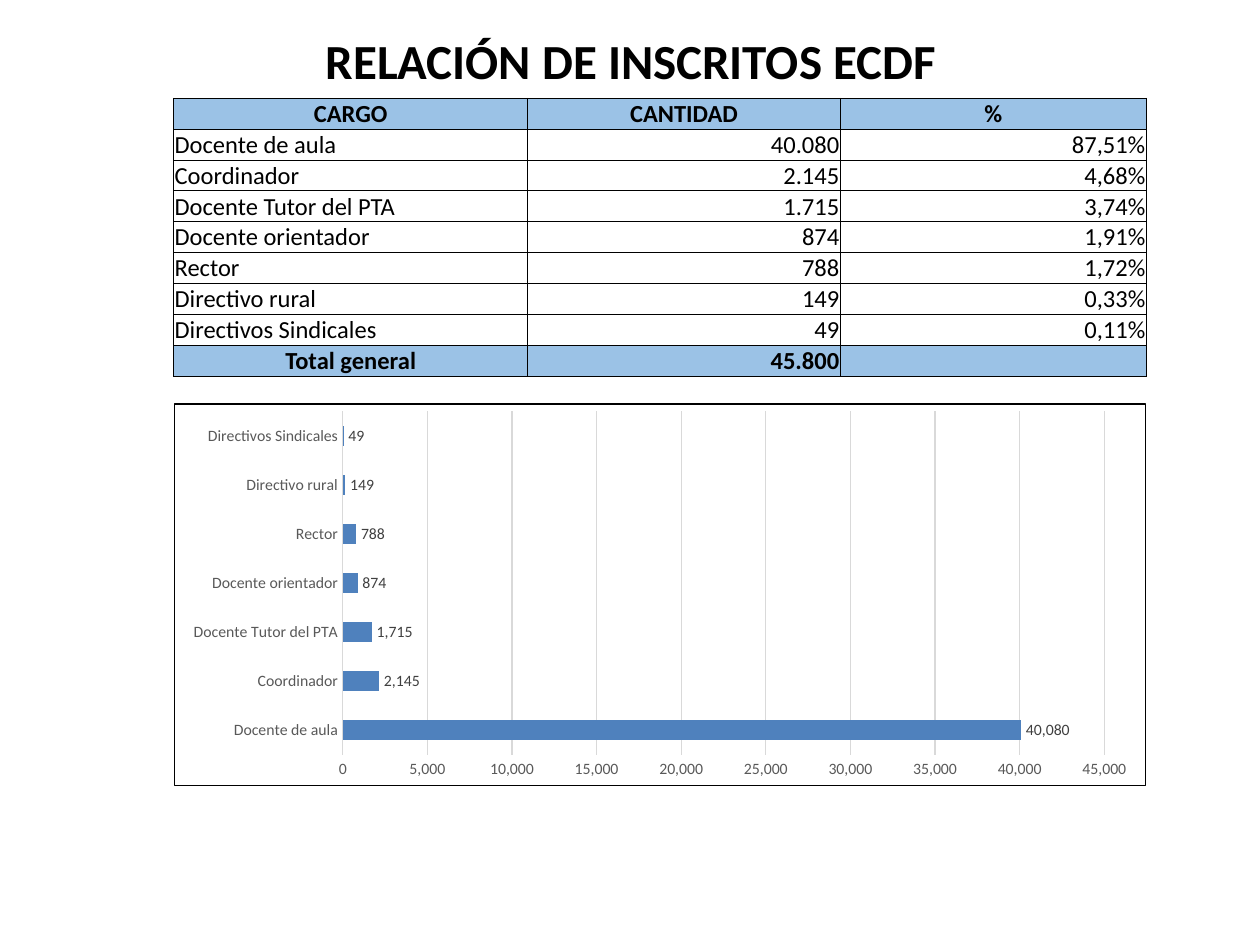
"""Build the slide with the ECDF enrolment table and bar chart."""
from lxml import etree
from pptx import Presentation
from pptx import util as u
from pptx.chart import data as chart_data
from pptx.dml import color
from pptx.enum import chart as charts, shapes, text
from pptx.oxml import ns

FONT = "Calibri"
COLORS = {
    "black": "000000", "white": "FFFFFF", "header": "9BC2E6", "bar": "4F81BD",
    "axis": "595959", "label": "404040", "grid": "D9D9D9",
}
LEFT, WIDTH = u.Cm(3.5), u.Cm(19.61)
COLUMNS = (7.14, 6.3, 6.17)
ROW_HEIGHT = 0.62
HEADER = ("CARGO", "CANTIDAD", "%")
ROLES = (
    ("Docente de aula", 40080, "87,51%"),
    ("Coordinador", 2145, "4,68%"),
    ("Docente Tutor del PTA", 1715, "3,74%"),
    ("Docente orientador", 874, "1,91%"),
    ("Rector", 788, "1,72%"),
    ("Directivo rural", 149, "0,33%"),
    ("Directivos Sindicales", 49, "0,11%"),
)


def rgb(name):
    """Return the named colour."""
    return color.RGBColor.from_string(COLORS[name])


def style_font(font, size, tint, bold=False):
    """Set typeface, size, colour and weight."""
    font.name, font.size, font.bold = FONT, u.Pt(size), bold
    font.color.rgb = rgb(tint)


def add_span(para, words, size, bold, align):
    """Add one styled run to an aligned paragraph."""
    para.alignment = align
    span = para.add_run()
    span.text = words
    style_font(span.font, size, "black", bold)


def line_xml(tag, tint, points):
    """Return a solid line element."""
    return etree.fromstring(
        f'<a:{tag} xmlns:a="{ns.nsuri("a")}" w="{u.Pt(points)}"><a:solidFill>'
        f'<a:srgbClr val="{COLORS[tint]}"/></a:solidFill></a:{tag}>')


def add_title(page, words):
    """Add the title band."""
    box = page.shapes.add_shape(shapes.MSO_SHAPE.ROUND_2_DIAG_RECTANGLE,
                                u.Cm(0.03), u.Cm(0.56), u.Cm(25.37), u.Cm(1.3))
    box.shadow.inherit = False
    box.fill.solid()
    box.fill.fore_color.rgb = rgb("white")
    box.line.fill.background()
    box.text_frame.word_wrap = True
    box.text_frame.vertical_anchor = text.MSO_ANCHOR.MIDDLE
    add_span(box.text_frame.paragraphs[0], words, 28, True, text.PP_ALIGN.CENTER)


def fill_cell(cell, words, align, strong):
    """Write and style one table cell."""
    cell.margin_left = cell.margin_right = cell.margin_top = u.Cm(0.02)
    cell.margin_bottom = 0
    cell.vertical_anchor = text.MSO_ANCHOR.BOTTOM
    para = cell.text_frame.paragraphs[0]
    if words:
        add_span(para, words, 14, strong, align)
    else:
        para._p.get_or_add_endParaRPr().set("sz", "1400")
    properties = cell._tc.get_or_add_tcPr()
    for tag in ("lnL", "lnR", "lnT", "lnB"):
        properties.append(line_xml(tag, "black", 0.5))
    if strong:
        cell.fill.solid()
        cell.fill.fore_color.rgb = rgb("header")
    else:
        cell.fill.background()


def add_role_table(page):
    """Add the table of roles with header and total."""
    body = [(role, f"{count:,}".replace(",", "."), share) for role, count, share in ROLES]
    total = f"{sum(count for _, count, _ in ROLES):,}".replace(",", ".")
    rows = [HEADER, *body, ("Total general", total, "")]
    frame = page.shapes.add_table(len(rows), len(COLUMNS), LEFT, u.Cm(1.98),
                                  WIDTH, u.Cm(ROW_HEIGHT * len(rows)))
    table = frame.table
    table.first_row = table.horz_banding = False
    for column, width in zip(table.columns, COLUMNS):
        column.width = u.Cm(width)
    center, left, right = text.PP_ALIGN.CENTER, text.PP_ALIGN.LEFT, text.PP_ALIGN.RIGHT
    aligns = [(center,) * 3, *[(left, right, right)] * len(body), (center, right, right)]
    for i, (row, row_aligns) in enumerate(zip(rows, aligns)):
        table.rows[i].height = u.Cm(ROW_HEIGHT)
        for j, (words, align) in enumerate(zip(row, row_aligns)):
            fill_cell(table.cell(i, j), words, align, i in (0, len(rows) - 1))


def style_axis(axis):
    """Give an axis small grey labels and neither line nor ticks."""
    axis.major_tick_mark = axis.minor_tick_mark = charts.XL_TICK_MARK.NONE
    axis.format.line.fill.background()
    style_font(axis.tick_labels.font, 9, "axis")


def add_role_chart(page):
    """Add the bar chart of enrolments by role."""
    data = chart_data.CategoryChartData(number_format="#,##0")
    data.categories = [role for role, _, _ in ROLES]
    data.add_series("Series 1", [count for _, count, _ in ROLES])
    chart = page.shapes.add_chart(charts.XL_CHART_TYPE.BAR_CLUSTERED, LEFT,
                                  u.Cm(8.13), WIDTH, u.Cm(7.72), data).chart
    chart.has_legend = chart.has_title = False
    style_font(chart.font, 10, "black")
    border = etree.Element(ns.qn("c:spPr"))
    border.append(line_xml("ln", "black", 0.75))
    chart._chartSpace.find(ns.qn("c:chart")).addnext(border)

    style_axis(chart.category_axis)
    chart.category_axis.has_major_gridlines = False
    values = chart.value_axis
    style_axis(values)
    values.minimum_scale, values.maximum_scale, values.major_unit = 0, 45000, 5000
    values.tick_labels.number_format = "#,##0"
    values.tick_labels.number_format_is_linked = False
    values.has_major_gridlines = True
    values.major_gridlines.format.line.color.rgb = rgb("grid")
    values.major_gridlines.format.line.width = u.Pt(0.75)

    plot = chart.plots[0]
    plot.gap_width, plot.vary_by_categories = 150, False
    series = plot.series[0]
    series.format.fill.solid()
    series.format.fill.fore_color.rgb = rgb("bar")
    labels = series.data_labels
    labels.show_value = True
    labels.number_format, labels.number_format_is_linked = "#,##0", False
    labels.position = charts.XL_LABEL_POSITION.OUTSIDE_END
    style_font(labels.font, 9, "label")


def main():
    """Build and save the deck."""
    deck = Presentation()
    deck.slide_width, deck.slide_height = u.Cm(25.4), u.Cm(19.05)
    page = deck.slides.add_slide(deck.slide_layouts[6])
    add_title(page, "RELACIÓN DE INSCRITOS ECDF")
    add_role_table(page)
    add_role_chart(page)
    deck.save("out.pptx")


if __name__ == "__main__":
    main()
